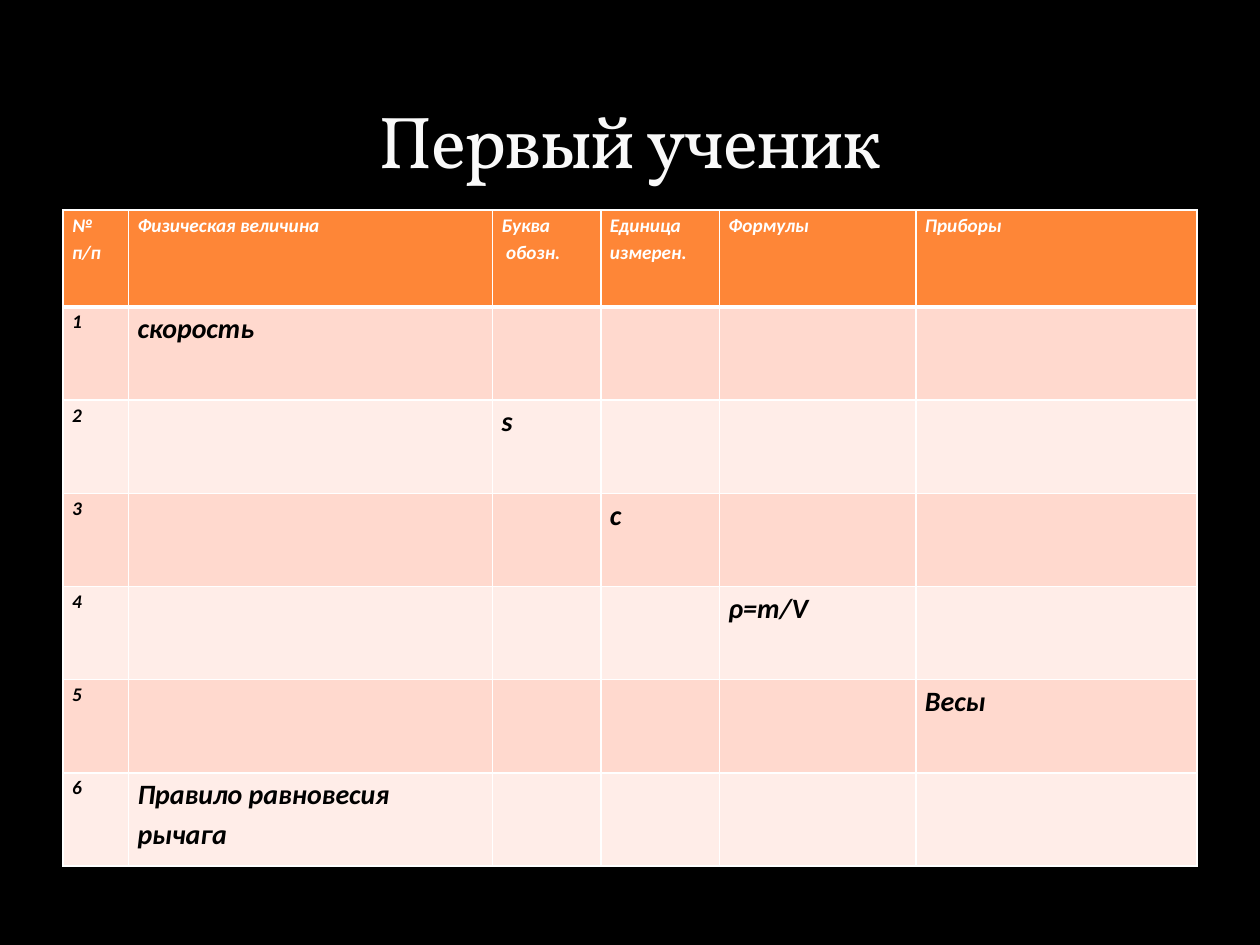
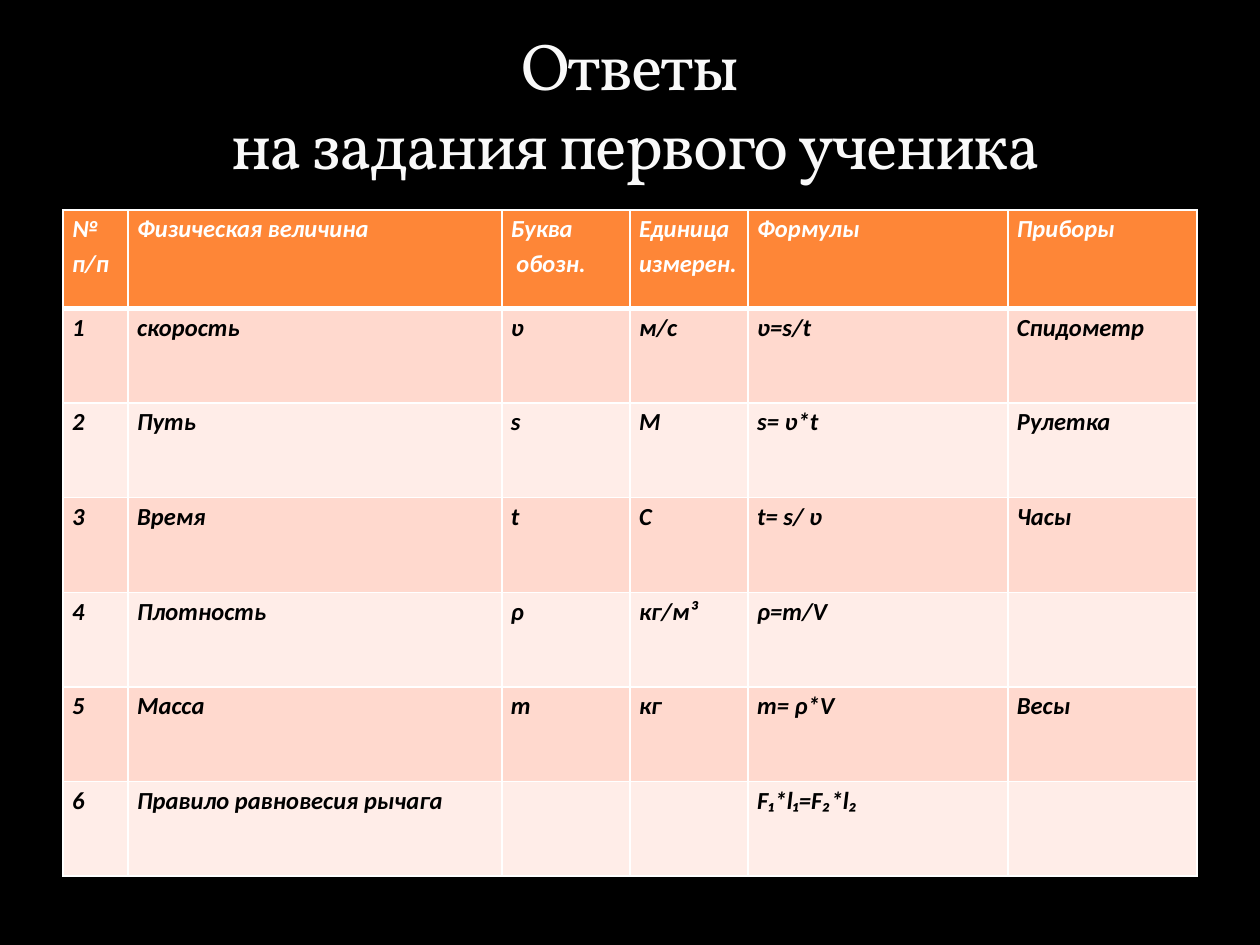
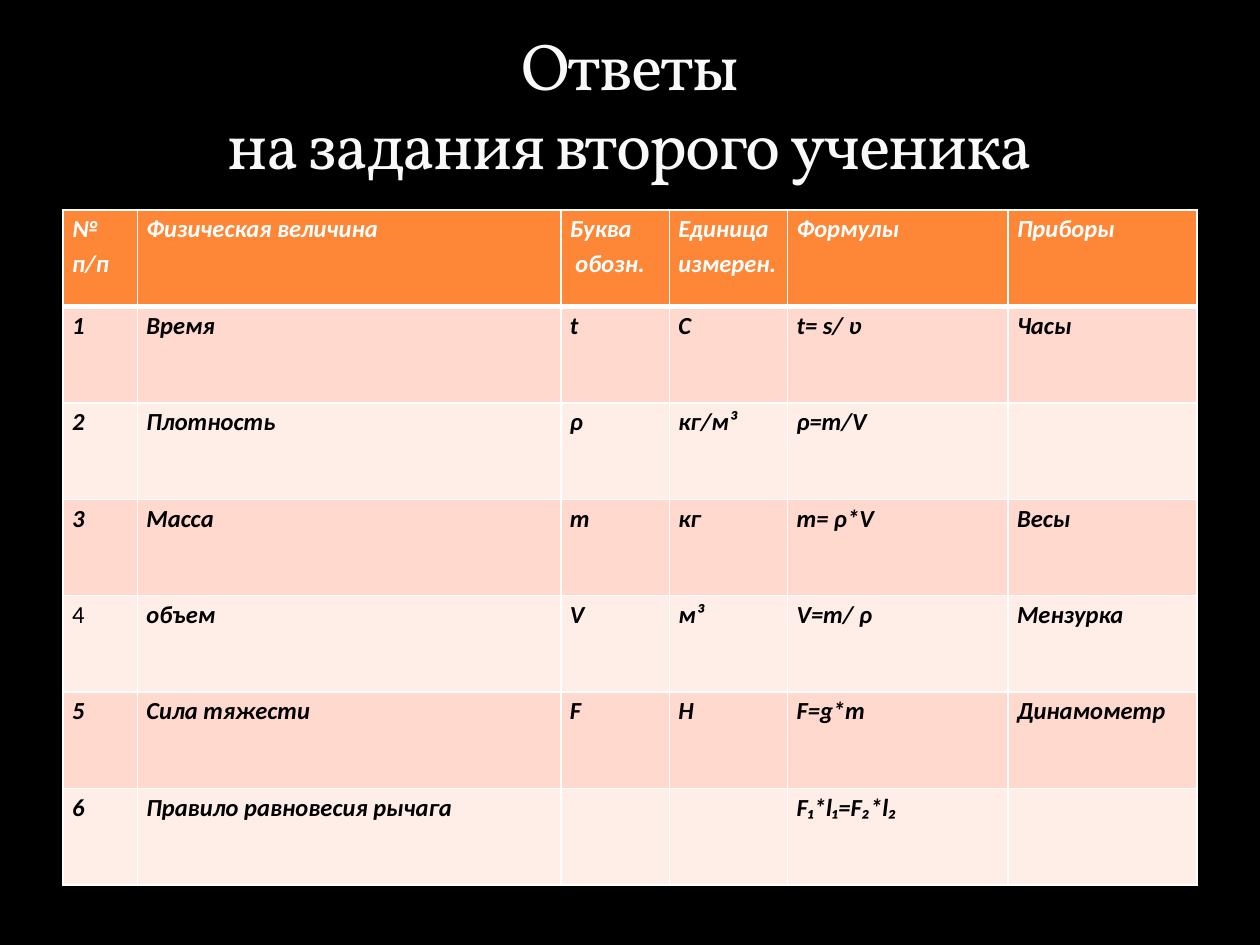
from lxml.etree import SubElement
from pptx import Presentation
from pptx.dml.color import RGBColor
from pptx.enum.text import MSO_ANCHOR as Anchor, PP_ALIGN as Align
from pptx.oxml.ns import qn
from pptx.util import Pt

# Shared look
BLACK, WHITE, TITLE_WHITE = "000000", "FFFFFF", "F9F9F9"
ORANGE, PEACH, PALE_PEACH = "FE8637", "FFD9CE", "FFEDE8"
LEFT, WIDTH = 36, 648
HEADINGS = ["№ п/п", "Физическая величина", "Буква\n обозн.",
            "Единица измерен.", "Формулы", "Приборы"]
LEVER = "Правило равновесия рычага"
LEVER_LAW = "F₁*l₁=F₂*l₂"

# Answers common to both pupils
TIME = ["Время", "t", "С", "t= s/ ʋ", "Часы"]
DENSITY = ["Плотность", "ρ", "кг/м³", "ρ=m/V", ""]
MASS = ["Масса", "m", "кг", "m= ρ*V", "Весы"]
LEVER_ANSWER = [LEVER, "", "", LEVER_LAW, ""]

lessons = [
    dict(title="Первый ученик", title_size=42, label_size=11, entry_size=16,
         widths=[37.4, 208.1, 61.9, 67.7, 112.3, 160.6],
         header_height=55.4, row_height=53.28, plain_number=None,
         rows=[["скорость", "", "", "", ""],
               ["", "s", "", "", ""],
               ["", "", "с", "", ""],
               ["", "", "", "ρ=m/V", ""],
               ["", "", "", "", "Весы"],
               [LEVER, "", "", "", ""]]),
    dict(title="Ответы\n на задания первого ученика", title_size=37.8,
         label_size=14, entry_size=14,
         widths=[37.2, 213.6, 73.2, 67.5, 148.5, 108],
         header_height=56.2, row_height=54.1, plain_number=None,
         rows=[["скорость", "ʋ", "м/с", "ʋ=s/t", "Спидометр"],
               ["Путь", "s", "М", "s= ʋ*t", "Рулетка"],
               TIME, DENSITY, MASS, LEVER_ANSWER]),
    dict(title="Ответы\nна задания второго ученика", title_size=37.8,
         label_size=14, entry_size=14,
         widths=[42.5, 242, 62, 67.5, 126, 108],
         header_height=55.13, row_height=55.13, plain_number=4,
         rows=[TIME, DENSITY, MASS,
               ["объем", "V", "м³", "V=m/ ρ", "Мензурка"],
               ["Сила тяжести", "F", "Н", "F=g*m", "Динамометр"],
               LEVER_ANSWER]),
]


def rgb(value):
    return RGBColor.from_string(value)


def add_border(cell, side, points):
    line = SubElement(cell._tc.get_or_add_tcPr(), qn(f"a:ln{side}"), w=str(Pt(points)))
    SubElement(SubElement(line, qn("a:solidFill")), qn("a:srgbClr"), val=WHITE)


deck = Presentation()
deck.slide_width, deck.slide_height = Pt(720), Pt(540)

for lesson in lessons:
    slide = deck.slides.add_slide(deck.slide_layouts[6])
    slide.background.fill.solid()
    slide.background.fill.fore_color.rgb = rgb(BLACK)

    # Table of quantities
    body = [[str(n), *row] for n, row in enumerate(lesson["rows"], 1)]
    content = [HEADINGS, *body]
    height = lesson["header_height"] + len(body) * lesson["row_height"]
    quantities = slide.shapes.add_table(len(content), len(HEADINGS), Pt(LEFT), Pt(120),
                                        Pt(WIDTH), Pt(height)).table
    for column, width in zip(quantities.columns, lesson["widths"]):
        column.width = Pt(width)

    for r, row in enumerate(content):
        header = r == 0
        quantities.rows[r].height = Pt(lesson["header_height" if header else "row_height"])
        for c, words in enumerate(row):
            cell = quantities.cell(r, c)
            cell.margin_left = cell.margin_right = Pt(5.2)
            cell.margin_top = cell.margin_bottom = 0
            for side in "LRTB":
                under_header = (r, side) in [(0, "B"), (1, "T")]
                add_border(cell, side, 3 if under_header else 1)
            cell.fill.solid()
            cell.fill.fore_color.rgb = rgb(ORANGE if header else PEACH if r % 2 else PALE_PEACH)

            cell.text_frame.text = words
            emphasis = not (c == 0 and r == lesson["plain_number"])
            for paragraph in cell.text_frame.paragraphs:
                paragraph.line_spacing = 1.15
                font = paragraph.font
                font.name = "Calibri"
                font.size = Pt(lesson["label_size" if header or c == 0 else "entry_size"])
                font.bold = font.italic = emphasis
                font.color.rgb = rgb(WHITE if header else BLACK)

    # Title
    title = slide.shapes.add_textbox(Pt(LEFT), Pt(12), Pt(WIDTH), Pt(96)).text_frame
    title.word_wrap = True
    title.vertical_anchor = Anchor.BOTTOM
    heading = title.paragraphs[0]
    heading.text = lesson["title"]
    heading.alignment = Align.CENTER
    heading.font.name = "Vollkorn"
    heading.font.size = Pt(lesson["title_size"])
    heading.font.color.rgb = rgb(TITLE_WHITE)
    heading.font._rPr.set("spc", "-100")

deck.save("out.pptx")
